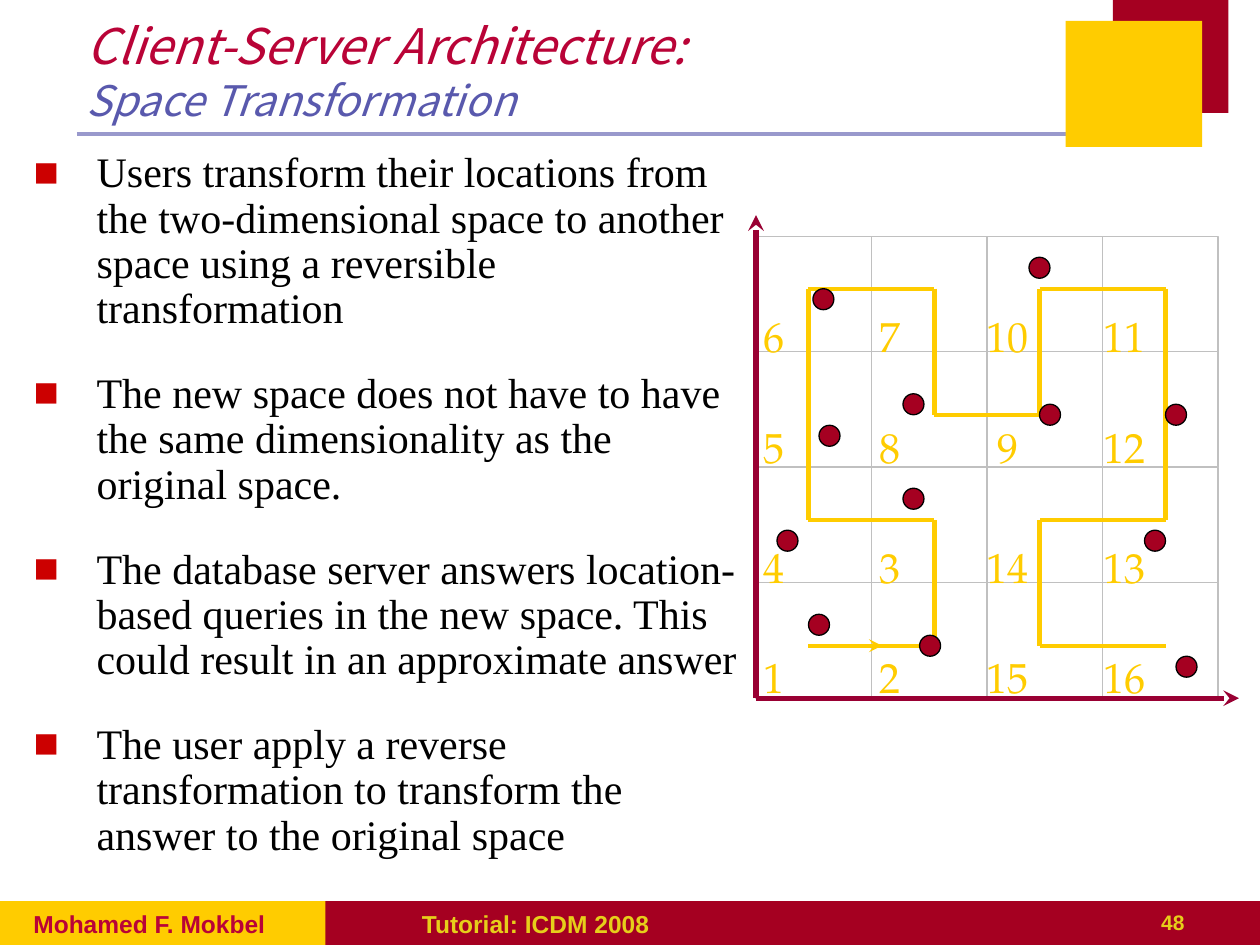
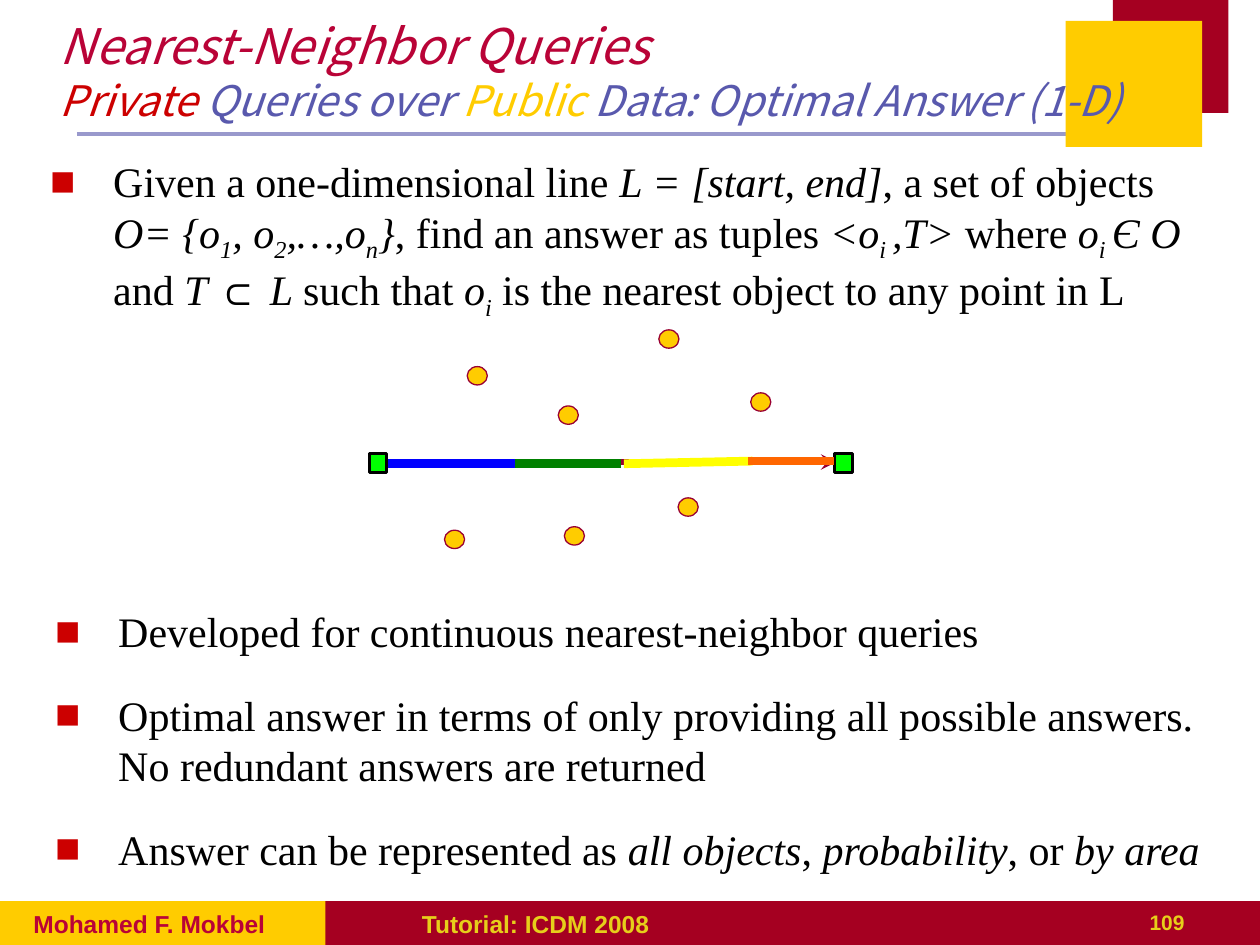
"""Build two tutorial slides on location privacy: space transformation and nearest-neighbor queries."""
import itertools

import pptx
import pptx.dml.color
import pptx.enum.shapes
import pptx.enum.text
import pptx.oxml.ns
import pptx.oxml.xmlchemy
import pptx.util
from lxml import etree

Pt = pptx.util.Pt
SHAPES = pptx.enum.shapes.MSO_SHAPE
ALIGN = pptx.enum.text.PP_ALIGN

CRIMSON, GOLD, MAROON = "A50021", "FFCC00", "990033"
TITLE_RED, TITLE_BLUE, BULLET_RED = "B90337", "5959AD", "CC0000"
FOOTER_GOLD, RULE_BLUE, GRID_GRAY, BLACK = "E6CE1A", "9999CC", "C0C0C0", "000000"
TITLE_FONT, BODY_FONT, FOOTER_FONT, CELL_FONT = (
    "Noto Sans CJK KR", "Times New Roman", "Arial", "TeX Gyre Pagella")

HILBERT_CELLS = [
    (0, 3), (1, 3), (1, 2), (0, 2), (0, 1), (0, 0), (1, 0), (1, 1),
    (2, 1), (2, 0), (3, 0), (3, 1), (3, 2), (2, 2), (2, 3), (3, 3)]
CURVE_X, CURVE_Y = (462, 534, 594, 666), (165, 237, 297, 369)
NUMBER_X, NUMBER_Y = (420, 486, 553.5, 620), (174, 237.5, 306, 368.5)
USERS = [
    (462, 351), (525.5, 363), (516, 279), (444, 303), (468, 243), (464.5, 165),
    (516, 225), (594, 231), (666, 231), (672, 375), (588, 147), (654, 303)]

OBJECTS = [
    (429, 224.5), (319, 232), (267, 209.5), (387.5, 284.5),
    (376.5, 188.5), (254, 303), (322.5, 301)]
ANSWER_SEGMENTS = [
    ((294.5, 265), (355, 265), "008000"), ((356.5, 265), (430, 263.5), "FFFF00"),
    ((427.5, 263.5), (476.5, 263.5), "FF6600"), ((222, 265), (294.5, 265), "0000FF")]


def rgb(hex_code):
    """Turn a hex string into a colour."""
    return pptx.dml.color.RGBColor.from_string(hex_code)


def add_child(parent, tag, **attributes):
    """Append a DrawingML element to a parent."""
    return etree.SubElement(parent, pptx.oxml.ns.qn(tag), attributes)


def add_run(paragraph, text, font, size, color, bold=False, italic=False):
    """Add one formatted run."""
    run = paragraph.add_run()
    run.text = text
    run.font.name, run.font.size = font, Pt(size)
    run.font.bold, run.font.italic = bold, italic
    run.font.color.rgb = rgb(color)
    return run


def place(shape, left, top, width, height):
    """Move and size a shape in points."""
    shape.left, shape.top = Pt(left), Pt(top)
    shape.width, shape.height = Pt(width), Pt(height)


def add_figure(slide, kind, box, fill=None, outline=None, weight=0.75):
    """Draw a preset shape with an optional fill and outline."""
    figure = slide.shapes.add_shape(kind, *map(Pt, box))
    figure.shadow.inherit = False
    if fill:
        figure.fill.solid()
        figure.fill.fore_color.rgb = rgb(fill)
    else:
        figure.fill.background()
    if outline:
        figure.line.color.rgb = rgb(outline)
        figure.line.width = Pt(weight)
    else:
        figure.line.fill.background()


def add_line(slide, start, end, color, weight, arrow=False):
    """Draw a straight line, with a stealth head at its end if wanted."""
    line = slide.shapes.add_connector(
        pptx.enum.shapes.MSO_CONNECTOR.STRAIGHT, *map(Pt, (*start, *end)))
    line.line.color.rgb = rgb(color)
    line.line.width = Pt(weight)
    properties = line._element.spPr
    if arrow:
        add_child(properties.find(pptx.oxml.ns.qn("a:ln")), "a:tailEnd", type="stealth")
    add_child(properties, "a:effectLst")


def add_label(slide, box, text, font, size, color, bold=False, align=ALIGN.LEFT):
    """Add a one-line text box."""
    label = slide.shapes.add_textbox(*map(Pt, box)).text_frame
    label.word_wrap = True
    label.paragraphs[0].alignment = align
    add_run(label.paragraphs[0], text, font, size, color, bold)


def fill_bullets(frame, items, gap=0, line_spacing=1.0):
    """Write bulleted paragraphs, each a list of (text, style) runs."""
    frame.word_wrap = True
    frame.auto_size = pptx.enum.text.MSO_AUTO_SIZE.NONE
    for index, item in enumerate(items):
        paragraph = frame.add_paragraph() if index else frame.paragraphs[0]
        properties = paragraph._p.get_or_add_pPr()
        properties.set("marL", str(Pt(36)))
        properties.set("indent", str(-Pt(36)))
        add_child(add_child(properties, "a:buClr"), "a:srgbClr", val=BULLET_RED)
        add_child(properties, "a:buFont", typeface="Arial")
        add_child(properties, "a:buChar", char="■")
        paragraph.line_spacing = line_spacing
        paragraph.space_before = Pt(gap if index else 0)
        for text, style in item:
            run = add_run(paragraph, text, BODY_FONT, 24, BLACK, italic=style != "plain")
            if style == "sub":
                run.font._element.set("baseline", "-25000")


def add_title(slide, box, heading, subtitle):
    """Fill the title with a heading line and coloured subtitle runs."""
    title = slide.shapes.title
    place(title, *box)
    frame = title.text_frame
    frame.auto_size = pptx.enum.text.MSO_AUTO_SIZE.NONE
    frame.vertical_anchor = pptx.enum.text.MSO_ANCHOR.MIDDLE
    paragraph = frame.paragraphs[0]
    paragraph.alignment = ALIGN.LEFT
    add_run(paragraph, heading, TITLE_FONT, 28, TITLE_RED, italic=True)
    paragraph.add_line_break()
    for text, color in subtitle:
        add_run(paragraph, text, TITLE_FONT, 24, color, italic=True)


def add_tutorial_slide(deck, number):
    """Add a slide with the shared rule, corner squares and footer behind its placeholders."""
    slide = deck.slides.add_slide(deck.slide_layouts[1])
    placeholders = list(slide.placeholders)
    add_line(slide, (44, 76.5), (614, 76.5), RULE_BLUE, 2.25)
    for box, fill in [
            ((0, 515, 720, 25), CRIMSON), ((0, 515, 186, 25), GOLD),
            ((636, 0, 66, 64.5), CRIMSON), ((609, 12, 78, 72), GOLD)]:
        add_figure(slide, SHAPES.RECTANGLE, box, fill)
    add_label(slide, (534, 516, 150, 24), number, FOOTER_FONT, 12, FOOTER_GOLD, True, ALIGN.RIGHT)
    add_label(slide, (234, 516, 336, 24), "Tutorial: ICDM 2008", FOOTER_FONT, 14, FOOTER_GOLD, True)
    add_label(slide, (12, 516, 168, 18), "Mohamed F. Mokbel", FOOTER_FONT, 14, TITLE_RED, True)
    for placeholder in placeholders:
        slide.shapes._spTree.append(placeholder._element)
    return slide


def add_hilbert_grid(slide):
    """Draw the numbered grid, its space-filling curve, the users and the axes."""
    for row, column in itertools.product(range(4), repeat=2):
        cell = (432 + 66 * column, 135 + 66 * row, 66, 66)
        add_figure(slide, SHAPES.RECTANGLE, cell, outline=GRID_GRAY)
    origin = (432, 399)
    add_line(slide, origin, (432, 123), MAROON, 3, arrow=True)
    curve = [(CURVE_X[column], CURVE_Y[row]) for column, row in HILBERT_CELLS]
    for start, end in zip(curve, curve[1:]):
        add_line(slide, start, end, GOLD, 2.5)
    add_line(slide, (480, 369), (504, 369), GOLD, 2.5, arrow=True)
    for left, top in USERS:
        add_figure(slide, SHAPES.OVAL, (left, top, 12, 12), CRIMSON, BLACK)
    add_line(slide, origin, (708, 399), MAROON, 3, arrow=True)
    for number, (column, row) in enumerate(HILBERT_CELLS, 1):
        box = (NUMBER_X[column], NUMBER_Y[row], 45, 36)
        add_label(slide, box, str(number), CELL_FONT, 24, GOLD, align=ALIGN.CENTER)


def add_answer_line(slide):
    """Draw the query line, its objects, end points and coloured answer segments."""
    add_line(slide, (212.5, 264), (478, 264), MAROON, 3, arrow=True)
    for left, top in OBJECTS:
        add_figure(slide, SHAPES.OVAL, (left, top, 11.5, 10.5), GOLD, MAROON)
    for left in (211, 477):
        add_figure(slide, SHAPES.RECTANGLE, (left, 259, 10, 11), "00FF00", BLACK, 1.5)
    for start, end, color in ANSWER_SEGMENTS:
        add_line(slide, start, end, color, 5)


def build_space_transformation(deck):
    """Build the slide on transforming the space."""
    slide = add_tutorial_slide(deck, "48")
    add_title(slide, (42, 10, 552, 60), "Client-Server Architecture:",
              [("Space Transformation", TITLE_BLUE)])
    body = slide.placeholders[1]
    place(body, 12, 83, 423, 454)
    points = [
        "Users transform their locations from the two-dimensional space to another space "
        "using a reversible transformation",
        "The new space does not have to have the same dimensionality as the original space.",
        "The database server answers location-based queries in the new space. This could "
        "result in an approximate answer",
        "The user apply a reverse transformation to transform the answer to the original space"]
    fill_bullets(body.text_frame, [[(point, "plain")] for point in points], 22.5, 0.9)
    add_hilbert_grid(slide)


def build_nearest_neighbor(deck):
    """Build the slide on nearest-neighbor queries."""
    slide = add_tutorial_slide(deck, "109")
    add_title(slide, (27, 10, 638, 60), "Nearest-Neighbor Queries", [
        ("Private ", BULLET_RED), ("Queries over ", TITLE_BLUE), ("Public", GOLD),
        (" Data: Optimal Answer (1-D)", TITLE_BLUE)])
    definition = slide.placeholders[1]
    place(definition, 21.5, 85.5, 677.5, 98)
    fill_bullets(definition.text_frame, [[
        ("Given a one-dimensional line ", "plain"), ("L = [start, end]", "italic"),
        (", a set of objects ", "plain"), ("O= {o", "italic"), ("1", "sub"),
        (", o", "italic"), ("2", "sub"), (",…,o", "italic"), ("n", "sub"), ("}", "italic"),
        (", find an answer as tuples ", "plain"), ("<o", "italic"), ("i ", "sub"),
        (",T>", "italic"), (" where ", "plain"), ("o", "italic"), ("i ", "sub"),
        ("Є O", "italic"), (" and ", "plain"), ("T ⊂ L ", "italic"),
        ("such that ", "plain"), ("o", "italic"), ("i", "sub"),
        (" is the nearest object to any point in L", "plain")]])
    add_answer_line(slide)
    properties = slide.shapes.add_textbox(Pt(24.5), Pt(342.5), Pt(695.5), Pt(113))
    fill_bullets(properties.text_frame, [
        [("Developed for continuous nearest-neighbor queries", "plain")],
        [("Optimal answer in terms of only providing all possible answers. "
          "No redundant answers are returned", "plain")],
        [("Answer can be represented as ", "plain"), ("all objects", "italic"),
         (", ", "plain"), ("probability", "italic"), (", or ", "plain"),
         ("by area", "italic")]], 19)


def main():
    """Build and save the deck."""
    deck = pptx.Presentation()
    deck.slide_width, deck.slide_height = Pt(720), Pt(540)
    build_space_transformation(deck)
    build_nearest_neighbor(deck)
    deck.save("out.pptx")


if __name__ == "__main__":
    main()
